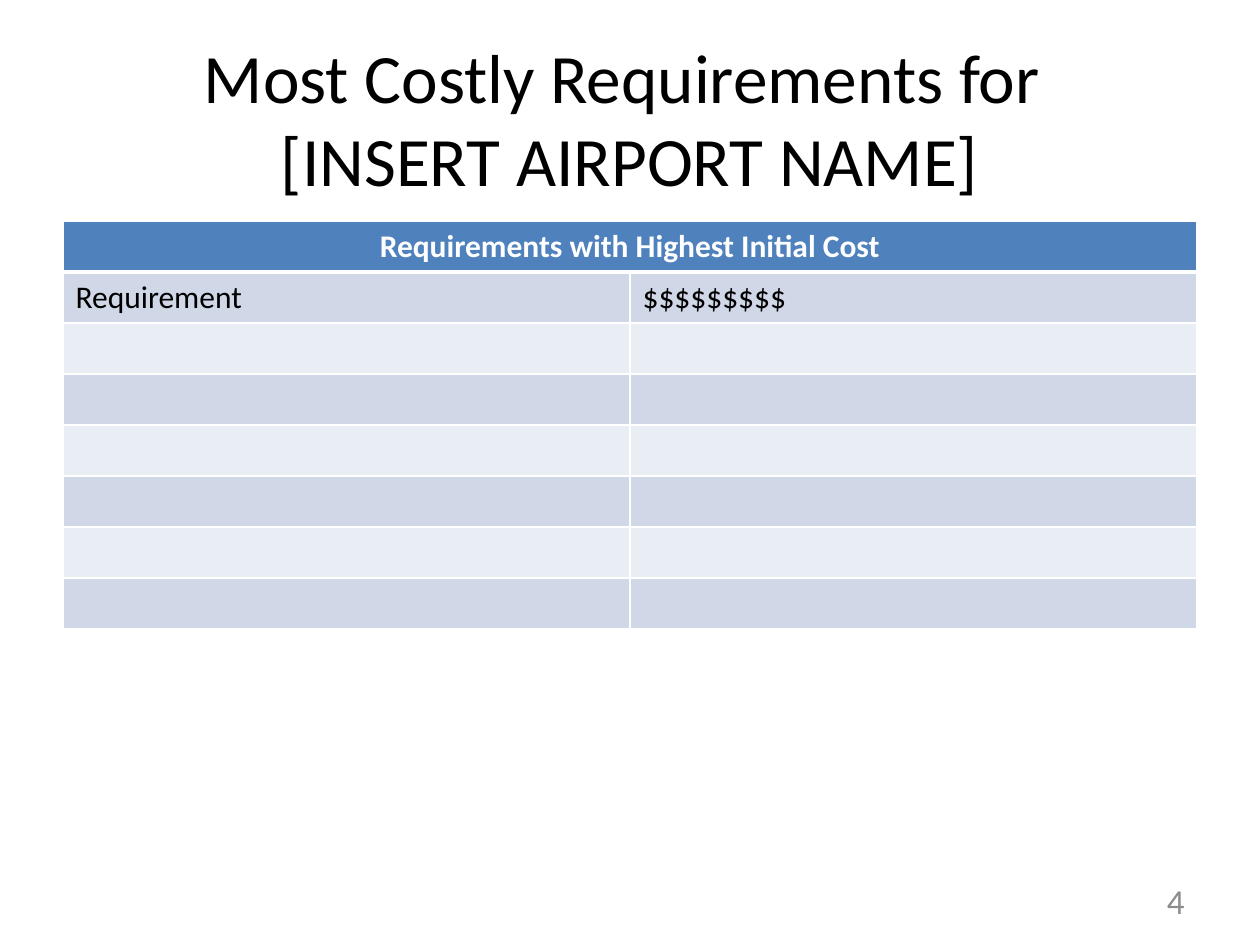
from dataclasses import dataclass

from lxml.etree import SubElement
from pptx import Presentation
from pptx.dml.color import RGBColor
from pptx.enum.text import MSO_ANCHOR, PP_ALIGN
from pptx.oxml.ns import qn
from pptx.util import Emu, Pt


@dataclass(frozen=True)
class Theme:
    font: str = "Calibri"
    ink: str = "000000"
    white: str = "FFFFFF"
    header: str = "4F81BD"
    bands: tuple = ("D0D8E8", "E9EDF4")
    muted: str = "8C8C8C"
    title_size: float = 39.6
    table_size: float = 18
    number_size: float = 20
    border: float = 1
    header_border: float = 3


THEME = Theme()
EMU_PER_PX = 914400 / 126
ROW_HEIGHT = 51
TABLE_ROWS = (
    ("Requirements with Highest Initial Cost", ""),
    ("Requirement", "$$$$$$$$$"),
) + (("", ""),) * 6


def px(length):
    return Emu(round(length * EMU_PER_PX))


def write(frame, text, size, color, align=PP_ALIGN.LEFT, bold=False):
    para = frame.paragraphs[0]
    para.text = text
    para.alignment = align
    values = {"name": THEME.font, "size": Pt(size), "bold": bold}
    for font in [para.font] + [span.font for span in para.runs]:
        for name, value in values.items():
            setattr(font, name, value)
        font.color.rgb = RGBColor.from_string(color)


def add_text(page, area, text, size, color, align):
    box = page.shapes.add_textbox(*map(px, area))
    frame = box.text_frame
    frame.word_wrap = True
    frame.vertical_anchor = MSO_ANCHOR.MIDDLE
    write(frame, text, size, color, align)


def set_borders(cell, top, bottom):
    properties = cell._tc.get_or_add_tcPr()
    widths = {"a:lnL": THEME.border, "a:lnR": THEME.border, "a:lnT": top, "a:lnB": bottom}
    for tag, width in widths.items():
        line = SubElement(properties, qn(tag), w=str(Pt(width)))
        fill = SubElement(line, qn("a:solidFill"))
        SubElement(fill, qn("a:srgbClr"), val=THEME.white)


def style_cell(cell, row, text):
    is_header = row == 0
    set_borders(
        cell,
        THEME.header_border if row == 1 else THEME.border,
        THEME.header_border if is_header else THEME.border,
    )
    cell.fill.solid()
    color = THEME.header if is_header else THEME.bands[(row - 1) % 2]
    cell.fill.fore_color.rgb = RGBColor.from_string(color)
    write(
        cell.text_frame,
        text,
        THEME.table_size,
        THEME.white if is_header else THEME.ink,
        PP_ALIGN.CENTER if is_header else PP_ALIGN.LEFT,
        is_header,
    )


def add_cost_table(page, left, top, width):
    row_count, column_count = len(TABLE_ROWS), len(TABLE_ROWS[0])
    area = (left, top, width, ROW_HEIGHT * row_count)
    table = page.shapes.add_table(row_count, column_count, *map(px, area)).table
    for row, texts in enumerate(TABLE_ROWS):
        table.rows[row].height = px(ROW_HEIGHT)
        for column, text in enumerate(texts):
            style_cell(table.cell(row, column), row, text)
    table.cell(0, 0).merge(table.cell(0, column_count - 1))


def main():
    deck = Presentation()
    deck.slide_width, deck.slide_height = px(1260), px(945)
    page = deck.slides.add_slide(deck.slide_layouts[6])
    add_text(
        page,
        (63, 38, 1134, 158),
        "Most Costly Requirements for \n[INSERT AIRPORT NAME]",
        THEME.title_size,
        THEME.ink,
        PP_ALIGN.CENTER,
    )
    add_cost_table(page, 63, 221, 1134)
    add_text(page, (903, 876, 294, 50), "4", THEME.number_size, THEME.muted, PP_ALIGN.RIGHT)
    deck.save("out.pptx")


if __name__ == "__main__":
    main()
